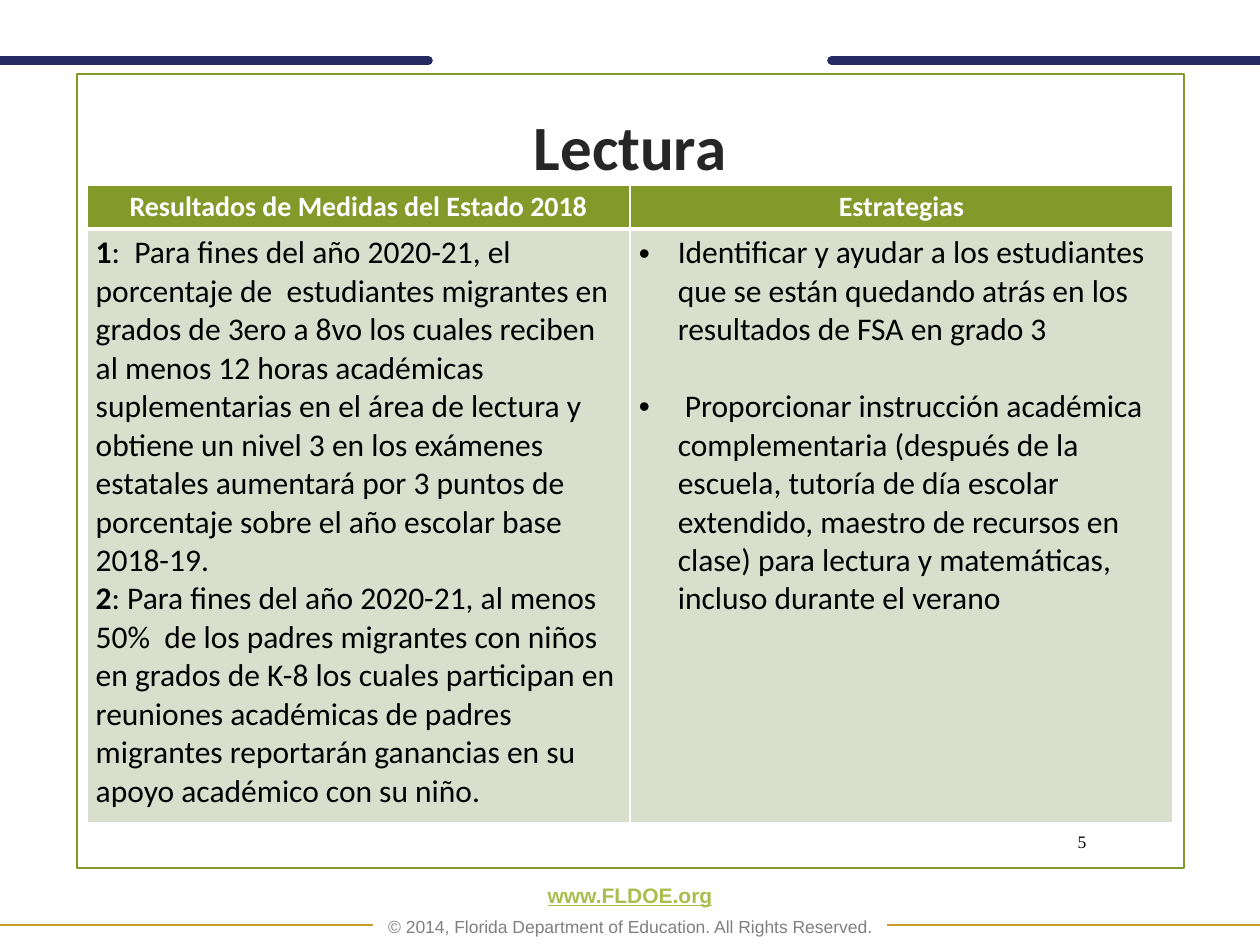
from lxml import etree
from pptx import Presentation
from pptx.dml.color import RGBColor
from pptx.enum.shapes import MSO_CONNECTOR, MSO_SHAPE
from pptx.enum.text import MSO_ANCHOR, PP_ALIGN
from pptx.oxml.ns import qn
from pptx.util import Inches, Pt

CENTER, RIGHT = PP_ALIGN.CENTER, PP_ALIGN.RIGHT
MIDDLE, BOTTOM = MSO_ANCHOR.MIDDLE, MSO_ANCHOR.BOTTOM
WIDTH, HEIGHT = 10, 7.5
GREEN, PALE, WHITE, BLACK = "83992A", "D9DECD", "FFFFFF", "000000"
NAVY, GOLD = "262A63", "CD9D2C"
LEFT, CONTENT_WIDTH = 0.69, 8.62

TITLE = "Lectura"
PAGE_NUMBER = "5"
FOOTER = [
    ("www.FLDOE.org", dict(size=12, name="Arial", color="A8BF4D", bold=True, underline=True), 0),
    ("© 2014, Florida Department of Education. All Rights Reserved.",
     dict(size=10, name="Arial", color="808080"), 6),
]
HEADERS = ["Resultados de Medidas del Estado 2018", "Estrategias"]
GOALS = [
    ("1", ":  Para fines del año 2020-21, el porcentaje de  estudiantes migrantes en grados "
          "de 3ero a 8vo los cuales reciben al menos 12 horas académicas suplementarias en el "
          "área de lectura y obtiene un nivel 3 en los exámenes estatales aumentará por 3 puntos "
          "de porcentaje sobre el año escolar base 2018-19."),
    ("2", ": Para fines del año 2020-21, al menos 50%  de los padres migrantes con niños en "
          "grados de K-8 los cuales participan en reuniones académicas de padres migrantes "
          "reportarán ganancias en su apoyo académico con su niño."),
]
STRATEGIES = [
    "Identificar y ayudar a los estudiantes que se están quedando atrás en los resultados "
    "de FSA en grado 3",
    " Proporcionar instrucción académica complementaria (después de la escuela, tutoría de "
    "día escolar extendido, maestro de recursos en clase) para lectura y matemáticas, incluso "
    "durante el verano",
]
RULES = [(0.48, 3.4, NAVY, 5, "rnd"), (7.34, 2.96, GOLD, 1, "flat")]
ROW_HEIGHTS = [0.34, 4.71]
HEADER_FONT = dict(size=16, name="Calibri", color=WHITE, bold=True)
BODY_FONT = dict(size=18, name="Calibri", color=BLACK, bold=False)


def rgb(color):
    return RGBColor.from_string(color)


def add_run(paragraph, text, style):
    run = paragraph.add_run()
    run.text = text
    for key, value in style.items():
        if key == "color":
            run.font.color.rgb = rgb(value)
        else:
            setattr(run.font, key, Pt(value) if key == "size" else value)


def paragraphs(frame, count):
    return [frame.paragraphs[0]] + [frame.add_paragraph() for _ in range(count - 1)]


def add_text(slide, box, lines, align, anchor, spacing=1.0):
    frame = slide.shapes.add_textbox(*map(Inches, box)).text_frame
    frame.word_wrap = True
    frame.vertical_anchor = anchor
    for paragraph, (text, style, before) in zip(paragraphs(frame, len(lines)), lines):
        paragraph.alignment = align
        paragraph.line_spacing = spacing
        if before:
            paragraph.space_before = Pt(before)
        add_run(paragraph, text, style)


def add_rule(slide, start, end, y, color, width, cap):
    rule = slide.shapes.add_connector(
        MSO_CONNECTOR.STRAIGHT, Inches(start), Inches(y), Inches(end), Inches(y))
    rule.line.color.rgb = rgb(color)
    rule.line.width = Pt(width)
    rule.line._get_or_add_ln().set("cap", cap)
    etree.SubElement(rule._element.spPr, qn("a:effectLst"))


def set_borders(cell, widths):
    properties = cell._tc.get_or_add_tcPr()
    for index, (side, width) in enumerate(widths.items()):
        line = etree.Element(qn(f"a:ln{side}"), w=str(Pt(width)))
        fill = etree.SubElement(line, qn("a:solidFill"))
        etree.SubElement(fill, qn("a:srgbClr"), val=WHITE)
        properties.insert(index, line)


def add_bullet(paragraph):
    properties = paragraph._p.get_or_add_pPr()
    indent = Inches(0.31)
    properties.set("marL", str(indent))
    properties.set("indent", str(-indent))
    etree.SubElement(properties, qn("a:buFont"), typeface="Arial")
    etree.SubElement(properties, qn("a:buChar"), char="•")


def add_results_table(slide):
    table = slide.shapes.add_table(
        len(ROW_HEIGHTS), len(HEADERS), Inches(LEFT), Inches(1.47),
        Inches(CONTENT_WIDTH), Inches(sum(ROW_HEIGHTS))).table
    for row, height in zip(table.rows, ROW_HEIGHTS):
        row.height = Inches(height)
    for row, (color, divider_top, divider_bottom) in enumerate([(GREEN, 1, 3), (PALE, 3, 1)]):
        for cell in table.rows[row].cells:
            cell.fill.solid()
            cell.fill.fore_color.rgb = rgb(color)
            cell.margin_left = cell.margin_right = Inches(0.07)
            cell.margin_top = cell.margin_bottom = Inches(0.04)
            set_borders(cell, dict(L=1, R=1, T=divider_top, B=divider_bottom))
    for column, header in enumerate(HEADERS):
        paragraph = table.cell(0, column).text_frame.paragraphs[0]
        paragraph.alignment = CENTER
        add_run(paragraph, header, HEADER_FONT)
    goals_frame, strategies_frame = (cell.text_frame for cell in table.rows[1].cells)
    for paragraph, (number, goal) in zip(paragraphs(goals_frame, len(GOALS)), GOALS):
        add_run(paragraph, number, {**BODY_FONT, "bold": True})
        add_run(paragraph, goal, BODY_FONT)
    strategy_paragraphs = paragraphs(strategies_frame, len(STRATEGIES))
    for index, (paragraph, strategy) in enumerate(zip(strategy_paragraphs, STRATEGIES)):
        if index:
            paragraph.space_before = Pt(22)
        add_bullet(paragraph)
        add_run(paragraph, strategy, BODY_FONT)


def main():
    deck = Presentation()
    deck.slide_width, deck.slide_height = Inches(WIDTH), Inches(HEIGHT)
    slide = deck.slides.add_slide(deck.slide_layouts[6])
    frame = slide.shapes.add_shape(
        MSO_SHAPE.RECTANGLE, *map(Inches, (0.61, 0.59, 8.79, 6.3)))
    frame.shadow.inherit = False
    frame.fill.background()
    frame.line.color.rgb = rgb(GREEN)
    frame.line.width = Pt(1.25)
    add_text(slide, (LEFT, 7.06, CONTENT_WIDTH, 0.43), FOOTER, CENTER, BOTTOM, 0.9)
    for y, length, color, width, cap in RULES:
        add_rule(slide, 0, length, y, color, width, cap)
        add_rule(slide, WIDTH - length, WIDTH, y, color, width, cap)
    title_font = dict(size=36, name="Calibri", color="262626", bold=True)
    add_text(slide, (LEFT, 0.82, CONTENT_WIDTH, 0.66), [(TITLE, title_font, 0)], CENTER, MIDDLE)
    add_results_table(slide)
    number_font = dict(size=10, name="Times New Roman", color=BLACK)
    add_text(slide, (8.29, 6.52, 0.43, 0.31), [(PAGE_NUMBER, number_font, 0)], RIGHT, MIDDLE)
    deck.save("out.pptx")


if __name__ == "__main__":
    main()
